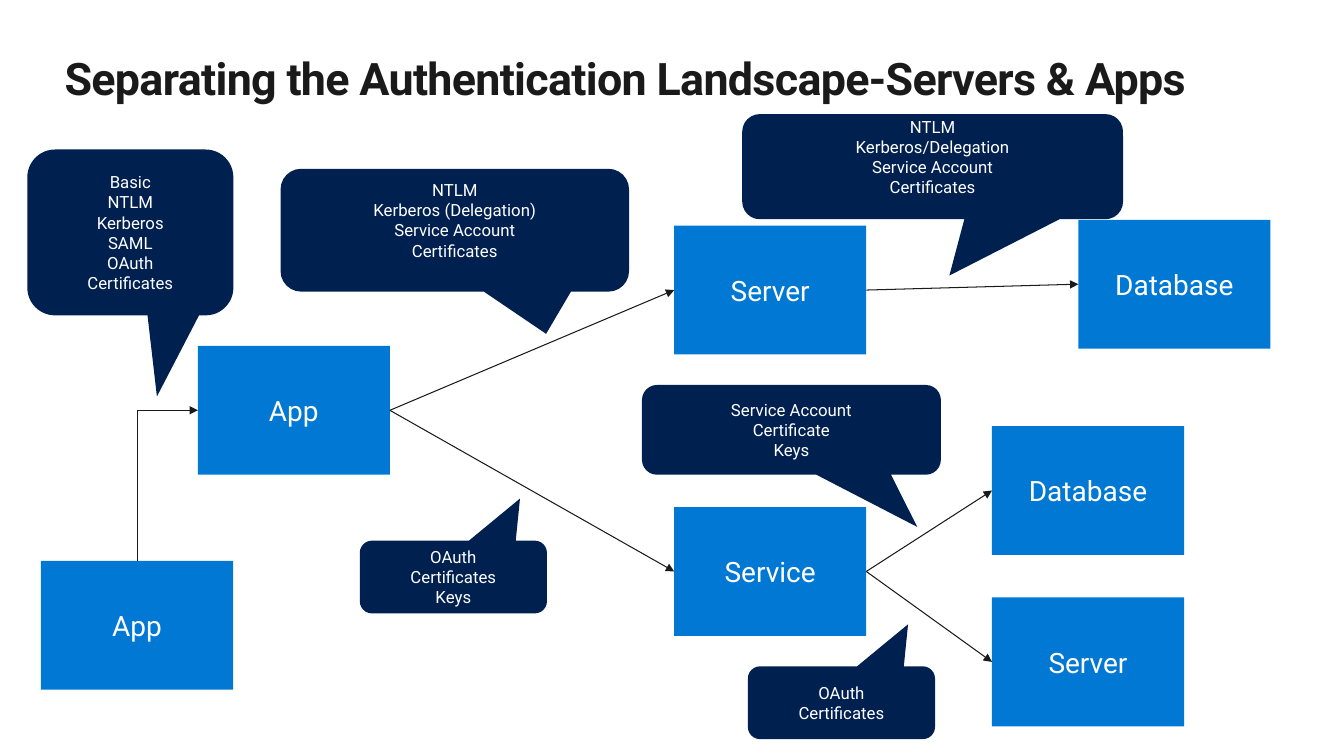
from lxml.etree import SubElement
from pptx import Presentation
from pptx.dml.color import RGBColor
from pptx.enum.shapes import MSO_CONNECTOR as LINK, MSO_SHAPE as SHAPE
from pptx.enum.text import MSO_ANCHOR as ANCHOR, MSO_AUTO_SIZE as AUTOSIZE, PP_ALIGN as ALIGN
from pptx.oxml.ns import qn
from pptx.util import Pt

# Content; all lengths in points
TITLE = "Separating the Authentication Landscape-Servers & Apps"
FONT, BLUE, NAVY, INK, WHITE = "Roboto", "0078D4", "002050", "1A1A1A", "FFFFFF"
NODE_W, NODE_H = 137.2, 92
NODES = {  # key: label, left, top
    "client app": ("App", 29.3, 400.6),
    "app": ("App", 141.3, 247.1),
    "server": ("Server", 481.6, 161.2),
    "service": ("Service", 481.6, 362.2),
    "server database": ("Database", 770.3, 157),
    "service server": ("Server", 708.6, 426.8),
    "service database": ("Database", 708.6, 304.4),
}
LINKS = [
    ("app", "server"),
    ("app", "service"),
    ("server", "server database"),
    ("service", "service database"),
    ("service", "service server"),
]
CALLOUTS = [  # lines, (left, top, width, height), pointer tip, lift of the text
    (["NTLM", "Kerberos/Delegation", "Service Account", "Certificates"],
     (530.2, 81.5, 272, 75.1), (0.044, 1.036), 14.4),
    (["OAuth", "Certificates", "Keys"],
     (257, 386.2, 133.7, 52), (0.356, -1.078), 0),
    (["Basic", "NTLM", "Kerberos", "SAML", "OAuth", "Certificates"],
     (19.5, 106.8, 147.2, 118.5), (0.129, 0.989), 0),
    (["NTLM", "Kerberos (Delegation)", "Service Account", "Certificates"],
     (200.4, 120.6, 248.9, 87.7), (0.262, 0.844), 14.4),
    (["OAuth", "Certificates"],
     (534.2, 476, 133.7, 52), (0.356, -1.078), 0),
    (["Service Account", "Certificate", "Keys"],
     (458.6, 275, 213.5, 64.1), (0.421, 1.082), 0),
]
LEFT_SITE, RIGHT_SITE, TOP_SITE = 1, 3, 0


def rgb(color):
    return RGBColor.from_string(color)


def style_font(font, size, color):
    font.name, font.size = FONT, Pt(size)
    font.color.rgb = rgb(color)


def add_panel(kind, box, fill, lines, size, lift=0):
    panel = slide.shapes.add_shape(kind, *map(Pt, box))
    panel.shadow.inherit = False
    panel.fill.solid()
    panel.fill.fore_color.rgb = rgb(fill)
    panel.line.fill.background()
    frame = panel.text_frame
    frame.word_wrap = True
    frame.vertical_anchor = ANCHOR.MIDDLE
    frame.margin_left = frame.margin_right = Pt(14.4)
    frame.margin_top = Pt(11.5 - lift / 2)
    frame.margin_bottom = Pt(11.5 + lift / 2)
    for i, line in enumerate(lines):
        paragraph = frame.add_paragraph() if i else frame.paragraphs[0]
        paragraph.text = line
        paragraph.alignment = ALIGN.CENTER
        style_font(paragraph.font, size, WHITE)
    return panel


def add_arrow(kind, source, source_site, target):
    arrow = slide.shapes.add_connector(kind, 0, 0, 0, 0)
    arrow.begin_connect(source, source_site)
    arrow.end_connect(target, LEFT_SITE)
    arrow.line.color.rgb = rgb(INK)
    arrow.line.width = Pt(0.75)
    properties = arrow._element.spPr
    SubElement(properties.find(qn("a:ln")), qn("a:tailEnd"), type="triangle")
    SubElement(properties, qn("a:effectLst"))
    return arrow


prs = Presentation()
prs.slide_width, prs.slide_height = Pt(960), Pt(540)
slide = prs.slides.add_slide(prs.slide_layouts[5])

# Title
title = slide.shapes.title
title.left, title.top, title.width, title.height = map(Pt, (46.1, 36, 867.6, 38.9))
heading = title.text_frame
heading.text = TITLE
heading.word_wrap = True
heading.auto_size = AUTOSIZE.NONE
heading.vertical_anchor = ANCHOR.TOP
heading.margin_left = heading.margin_right = heading.margin_top = heading.margin_bottom = 0
heading.paragraphs[0].alignment = ALIGN.LEFT
title_font = heading.paragraphs[0].runs[0].font
style_font(title_font, 32, INK)
title_font.bold = True
title_font._element.set("spc", "-50")

# Systems
nodes = {
    key: add_panel(SHAPE.RECTANGLE, (left, top, NODE_W, NODE_H), BLUE, [label], 20)
    for key, (label, left, top) in NODES.items()
}

# Elbow from the client app up to the app: a two-part bend, turned a quarter
client, app = nodes["client app"], nodes["app"]
elbow = add_arrow(LINK.ELBOW, client, TOP_SITE, app)
start_x, start_y = client.left + client.width // 2, client.top
end_x, end_y = app.left, app.top + app.height // 2
run, rise = end_x - start_x, start_y - end_y
elbow.left = (start_x + end_x - rise) // 2
elbow.top = (start_y + end_y - run) // 2
elbow.width, elbow.height = rise, run
elbow_properties = elbow._element.spPr
elbow_properties.find(qn("a:prstGeom")).set("prst", "bentConnector2")
for name, value in (("rot", "5400000"), ("flipH", "1"), ("flipV", "1")):
    elbow_properties.find(qn("a:xfrm")).set(name, value)

# Straight arrows
for source, target in LINKS:
    add_arrow(LINK.STRAIGHT, nodes[source], RIGHT_SITE, nodes[target])

# Authentication callouts
for lines, box, tip, lift in CALLOUTS:
    callout = add_panel(SHAPE.ROUNDED_RECTANGULAR_CALLOUT, box, NAVY, lines, 12, lift)
    for i, value in enumerate((*tip, 0.167)):
        callout.adjustments[i] = value

prs.save("out.pptx")
